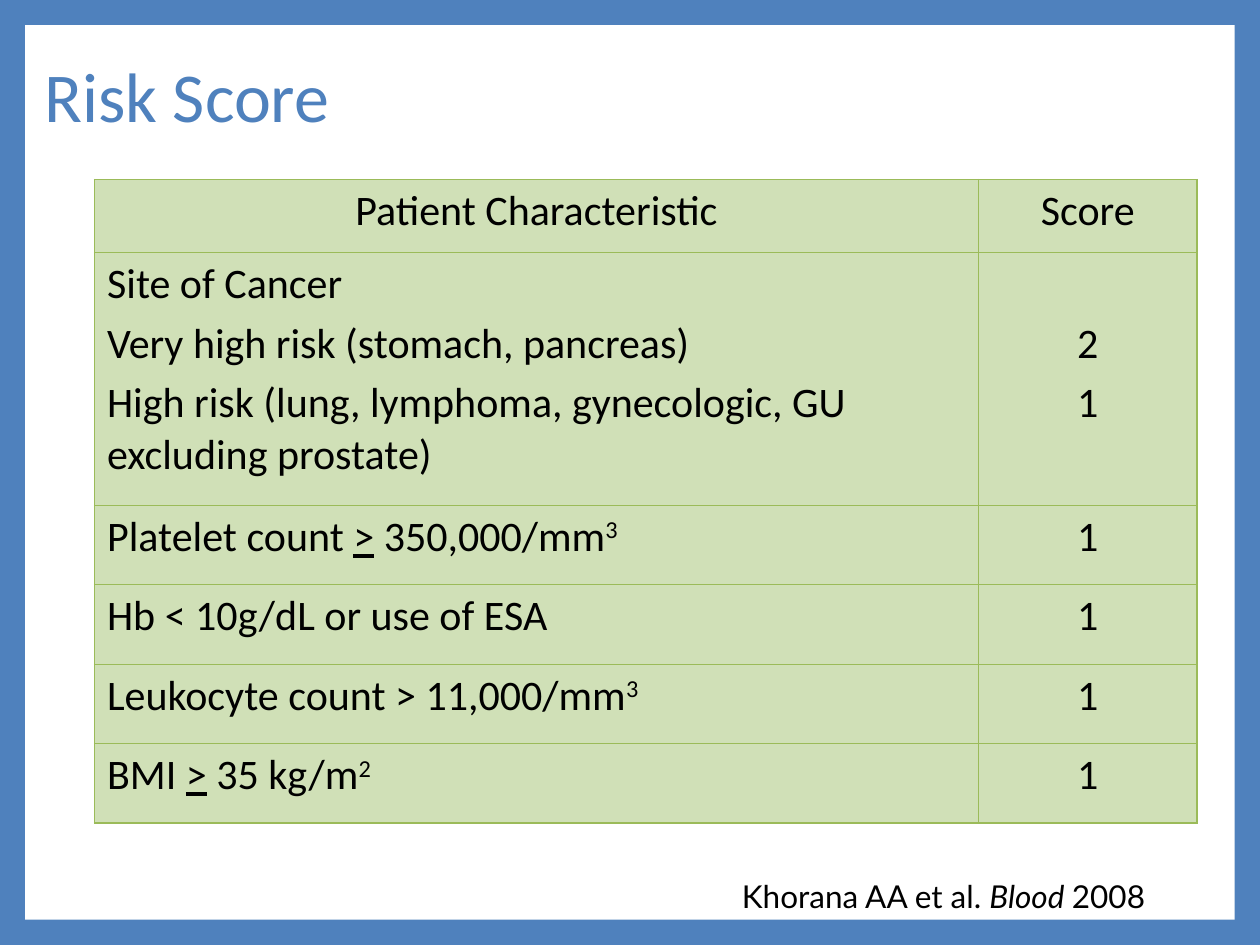
import pptx
import pptx.dml.color
import pptx.enum.text
import pptx.oxml
import pptx.oxml.ns
import pptx.util

Pt = pptx.util.Pt
Align = pptx.enum.text.PP_ALIGN
Anchor = pptx.enum.text.MSO_ANCHOR

BLUE, WHITE, BLACK = "4F81BD", "FFFFFF", "000000"
CELL_GREEN, BORDER_GREEN = "D0E0B7", "9BBB59"


def color(hex_value):
    return pptx.dml.color.RGBColor.from_string(hex_value)


class RiskSlide:
    """Holds the style and the current slide."""
    table_font, source_font = "Calibri", "Lato"
    table_size = 24
    border_width = 0.79

    def __init__(self, deck):
        self.slide = deck.slides.add_slide(deck.slide_layouts[5])
        self.shapes = self.slide.shapes

    def background(self, fill):
        self.slide.background.fill.solid()
        self.slide.background.fill.fore_color.rgb = color(fill)

    def panel(self, left, top, width, height, fill):
        panel = self.shapes.add_shape(1, Pt(left), Pt(top), Pt(width), Pt(height))
        panel.shadow.inherit = False
        panel.fill.solid()
        panel.fill.fore_color.rgb = color(fill)
        panel.line.fill.background()
        # Send behind the title
        self.shapes._spTree.insert(2, panel._element)

    def fill_text(self, paragraph, parts, font, size, ink=BLACK, align=Align.LEFT):
        """Fill a paragraph from plain text or from (text, style) pairs."""
        paragraph.alignment = align
        paragraph.font.name = font
        paragraph.font.size = Pt(size)
        paragraph.font.color.rgb = color(ink)
        for text, style in [(parts, "")] if isinstance(parts, str) else parts:
            run = paragraph.add_run()
            run.text = text
            if style == "underline":
                run.font.underline = True
            elif style == "italic":
                run.font.italic = True
            elif style == "super":
                run._r.get_or_add_rPr().set("baseline", "30000")

    def title(self, text, left, top, width, height):
        title = self.shapes.title
        title.left, title.top = Pt(left), Pt(top)
        title.width, title.height = Pt(width), Pt(height)
        title.text_frame.vertical_anchor = Anchor.MIDDLE
        heading = title.text_frame.paragraphs[0]
        heading.line_spacing = 0.9
        self.fill_text(heading, text, self.table_font, 40, BLUE)

    def border(self, cell):
        properties = cell._tc.get_or_add_tcPr()
        for position, side in enumerate(("lnL", "lnR", "lnT", "lnB")):
            properties.insert(position, pptx.oxml.parse_xml(
                f'<a:{side} {pptx.oxml.ns.nsdecls("a")} w="{Pt(self.border_width)}">'
                f'<a:solidFill><a:srgbClr val="{BORDER_GREEN}"/></a:solidFill></a:{side}>'))

    def cell(self, cell, lines, align):
        cell.fill.solid()
        cell.fill.fore_color.rgb = color(CELL_GREEN)
        self.border(cell)
        frame = cell.text_frame
        for index, line in enumerate(lines):
            paragraph = frame.add_paragraph() if index else frame.paragraphs[0]
            paragraph.space_before = Pt(0.2 * self.table_size)
            self.fill_text(paragraph, line, self.table_font, self.table_size, align=align)

    def table(self, rows, left, top, widths, heights):
        table = self.shapes.add_table(len(rows), len(widths), Pt(left), Pt(top),
                                      Pt(sum(widths)), Pt(sum(heights))).table
        table.first_row = table.horz_banding = False
        for column, width in zip(table.columns, widths):
            column.width = Pt(width)
        for r, (row, height) in enumerate(zip(rows, heights)):
            table.rows[r].height = Pt(height)
            for c, lines in enumerate(row):
                centered = r == 0 or c == 1
                self.cell(table.cell(r, c), lines, Align.CENTER if centered else Align.LEFT)
        return table

    def source(self, parts, left, top, width, height):
        box = self.shapes.add_textbox(Pt(left), Pt(top), Pt(width), Pt(height))
        box.text_frame.word_wrap = False
        self.fill_text(box.text_frame.paragraphs[0], parts, self.source_font, 18)


def main():
    deck = pptx.Presentation()
    deck.slide_width, deck.slide_height = Pt(720), Pt(540)
    risk = RiskSlide(deck)

    # Frame and title
    risk.background(BLUE)
    risk.panel(14.4, 14.4, 691.2, 511.2, WHITE)
    risk.title("Risk Score", 18, 12.24, 648, 90)

    # Risk factors and their scores
    rows = [
        (["Patient Characteristic"], ["Score"]),
        (["Site of Cancer", "Very high risk (stomach, pancreas)",
          "High risk (lung, lymphoma, gynecologic, GU excluding prostate)"], ["2", "1"]),
        ([[("Platelet count ", ""), (">", "underline"),
           (" 350,000/mm", ""), ("3", "super")]], ["1"]),
        (["Hb < 10g/dL or use of ESA"], ["1"]),
        ([[("Leukocyte count > 11,000/mm", ""), ("3", "super")]], ["1"]),
        ([[("BMI ", ""), (">", "underline"), (" 35 kg/m", ""), ("2", "super")]], ["1"]),
    ]
    scores = risk.table(rows, 54, 102.5, [505.2, 124.8], [41.7, 144.6] + [45.4] * 4)
    # Start the site scores level with the second line beside them
    scores.cell(1, 1).margin_top = Pt(37.7)

    # Source
    risk.source([("Khorana AA et al. ", ""), ("Blood ", "italic"), ("2008", "")],
                416.9, 497.5, 252, 29)
    deck.save("out.pptx")


if __name__ == "__main__":
    main()
